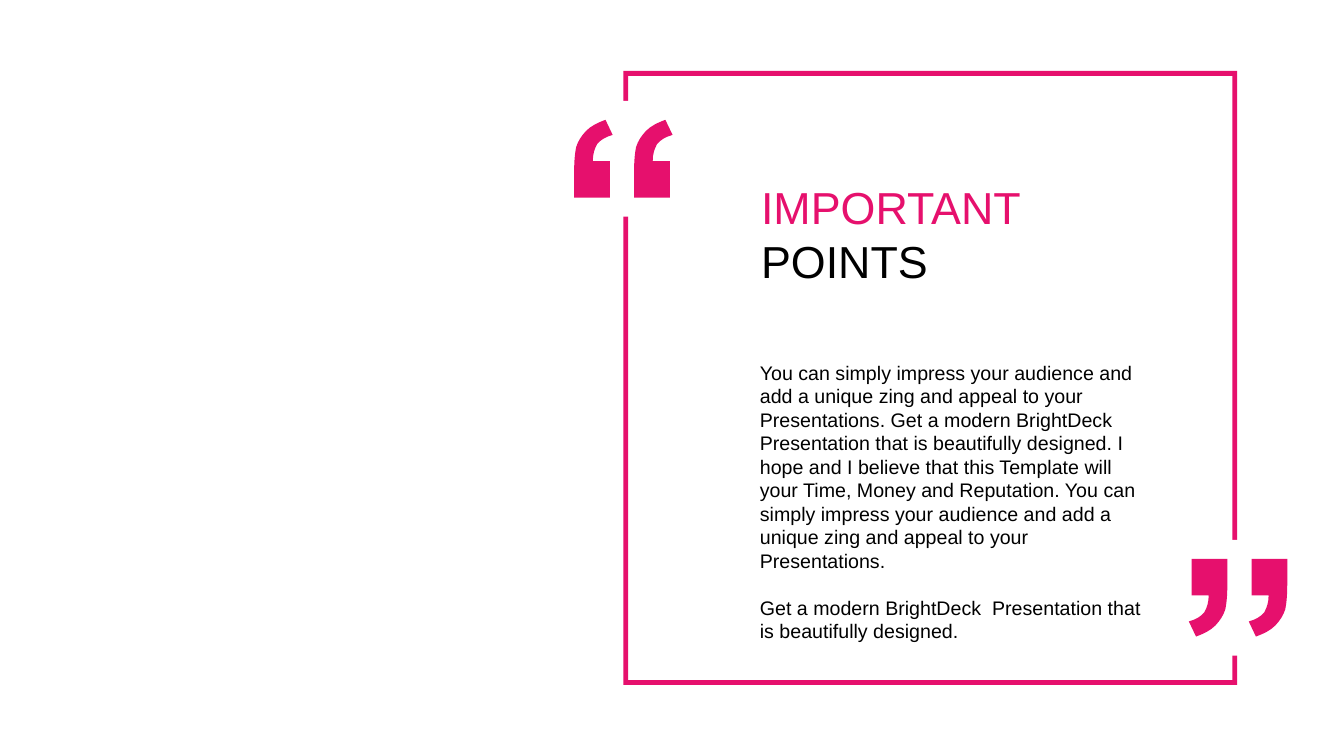
from lxml import etree
from pptx import Presentation
from pptx.dml.color import RGBColor
from pptx.enum.shapes import MSO_SHAPE
from pptx.enum.text import MSO_ANCHOR, MSO_AUTO_SIZE
from pptx.oxml.ns import qn
from pptx.util import Cm, Pt

FRAME, RECT = MSO_SHAPE.FRAME, MSO_SHAPE.RECTANGLE
TOP, MIDDLE = MSO_ANCHOR.TOP, MSO_ANCHOR.MIDDLE
GROW = MSO_AUTO_SIZE.SHAPE_TO_FIT_TEXT

# Content: paragraphs of (text, colour name) runs
TITLE = [[("IMPORTANT", "accent"), (" POINTS", "text")]]
BODY = [
    [("You can simply impress your audience and add a unique zing and appeal "
      "to your Presentations. Get a modern BrightDeck  Presentation that is "
      "beautifully designed. I hope and I believe that this Template will your "
      "Time, Money and Reputation. You can simply impress your audience and add "
      "a unique zing and appeal to your Presentations.", "text")],
    [("Get a modern BrightDeck  Presentation that is beautifully designed.",
      "text")],
]

THEME = {
    "font": "Arial",
    "title": Pt(32),
    "body": Pt(14),
    "gap": Pt(16.8),
    "accent": RGBColor(0xE6, 0x10, 0x6D),
    "text": RGBColor(0, 0, 0),
    "paper": RGBColor(0xFF, 0xFF, 0xFF),
}

# Layout in cm
FRAME_BOX = (15.71, 1.79, 15.47, 15.47)
FRAME_PERCENT = 0.8
TITLE_BOX = (18.93, 4.39, 9.19, 3.0)
BODY_BOX = (18.9, 8.96, 10.34, 7.44)
QUOTES = [(14.47, 3.02, 0), (29.96, 14.08, 180)]  # left, top, rotation
QUOTE_W, QUOTE_H = 2.49, 1.96
GAP_W, GAP_H = 3.2, 2.92
MARK_STEP = 1.51

# One quotation mark: a single point is a line, three points are a curve
MARK_START = (0.79, 0)
MARK = [
    [(0.97, 0.38)],
    [(0.79, 0.43), (0.66, 0.51), (0.58, 0.61)],
    [(0.51, 0.74), (0.47, 0.86), (0.47, 1.04)],
    [(0.9, 1.04)],
    [(0.9, 1.96)],
    [(0, 1.96)],
    [(0, 1.3)],
    [(0, 1.04), (0.02, 0.84), (0.05, 0.69)],
    [(0.1, 0.53), (0.18, 0.41), (0.3, 0.28)],
    [(0.43, 0.15), (0.58, 0.08), MARK_START],
]


def paint(sp, colour):
    sp.shadow.inherit = False
    sp.fill.solid()
    sp.fill.fore_color.rgb = THEME[colour]
    sp.line.fill.background()


def add_block(group, kind, box, colour):
    sp = group.shapes.add_shape(kind, *map(Cm, box))
    paint(sp, colour)
    return sp


def shifted(points, dx):
    return [(Cm(x + dx), Cm(y)) for x, y in points]


def add_quote(group, left, top, rotation):
    # Gap in the frame, centred on the pair of marks
    gap = add_block(group, RECT, (left - (GAP_W - QUOTE_W) / 2,
                                  top - (GAP_H - QUOTE_H) / 2,
                                  GAP_W, GAP_H), "paper")
    gap.rotation = rotation

    # Outline through the end point of each segment
    segments = [shifted(segment, dx) for dx in (0, MARK_STEP)
                for segment in MARK]
    starts = [shifted([MARK_START], dx)[0] for dx in (0, MARK_STEP)]
    builder = group.shapes.build_freeform(*starts[0])
    for i, start in enumerate(starts):
        if i:
            builder.move_to(*start)
        part = segments[i * len(MARK):(i + 1) * len(MARK)]
        builder.add_line_segments([segment[-1] for segment in part], close=True)
    sp = builder.convert_to_shape(Cm(left), Cm(top))
    sp.rotation = rotation
    paint(sp, "accent")

    # Turn the three-point segments into curves
    for node, points in zip(list(sp._element.iter(qn("a:lnTo"))), segments):
        if len(points) == 3:
            curve = etree.Element(qn("a:cubicBezTo"))
            for x, y in points:
                etree.SubElement(curve, qn("a:pt"), x=str(x), y=str(y))
            node.getparent().replace(node, curve)


def add_text(s, box, paragraphs, size, anchor):
    tf = s.shapes.add_textbox(*map(Cm, box)).text_frame
    tf.word_wrap = True
    tf.auto_size = GROW
    tf.vertical_anchor = anchor
    for i, runs in enumerate(paragraphs):
        p = tf.add_paragraph() if i else tf.paragraphs[0]
        if i:
            p.space_before = THEME["gap"]
        for text, colour in runs:
            r = p.add_run()
            r.text = text
            r.font.name = THEME["font"]
            r.font.size = THEME[size]
            r.font.color.rgb = THEME[colour]


def main():
    prs = Presentation()
    prs.slide_width, prs.slide_height = Cm(33.87), Cm(19.05)
    s = prs.slides.add_slide(prs.slide_layouts[6])

    # Frame with its quotation marks
    group = s.shapes.add_group_shape()
    frame = add_block(group, FRAME, FRAME_BOX, "accent")
    frame.adjustments[0] = FRAME_PERCENT / 100
    for quote in QUOTES:
        add_quote(group, *quote)

    # Heading and message
    add_text(s, TITLE_BOX, TITLE, "title", MIDDLE)
    add_text(s, BODY_BOX, BODY, "body", TOP)

    prs.save("out.pptx")


if __name__ == "__main__":
    main()
